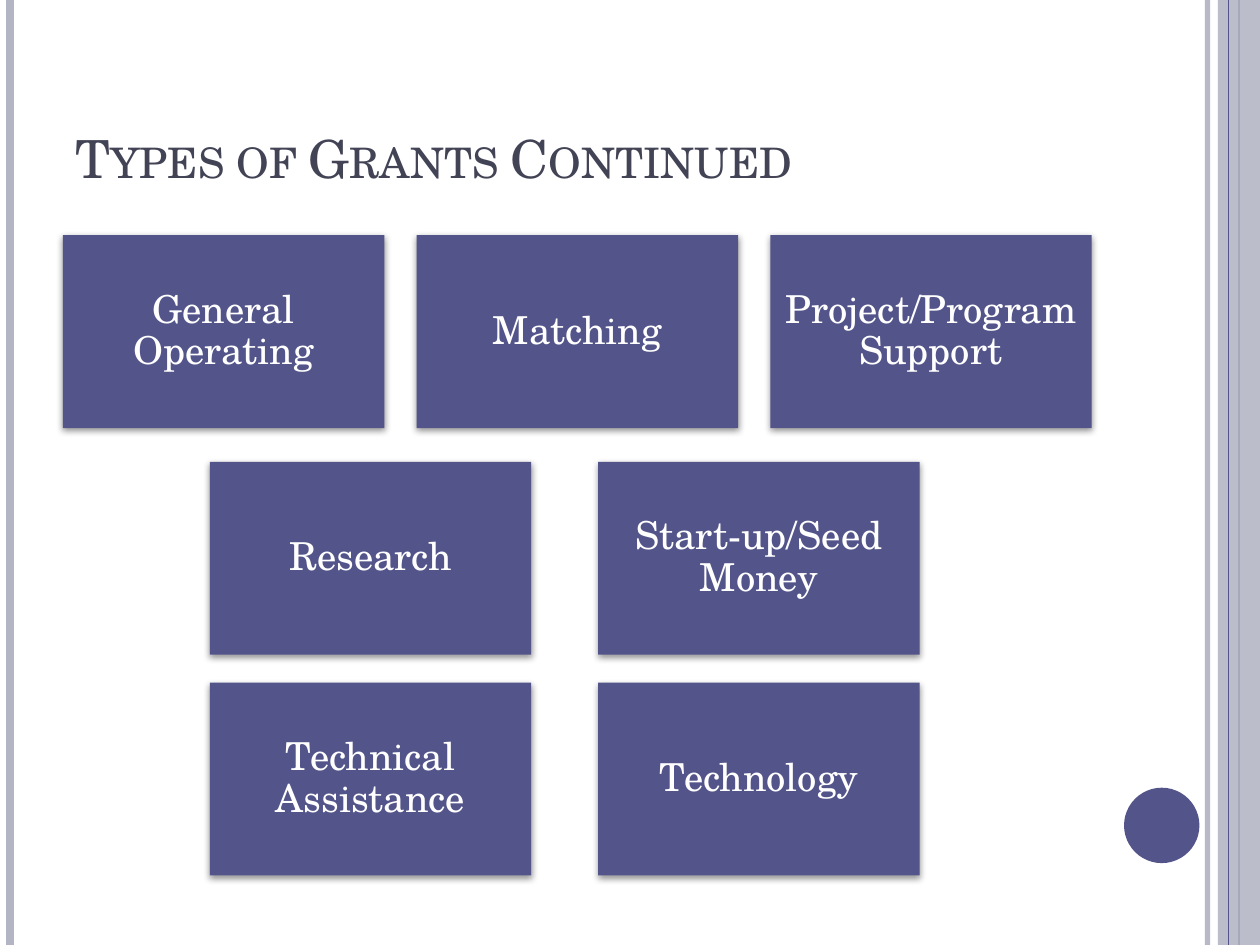
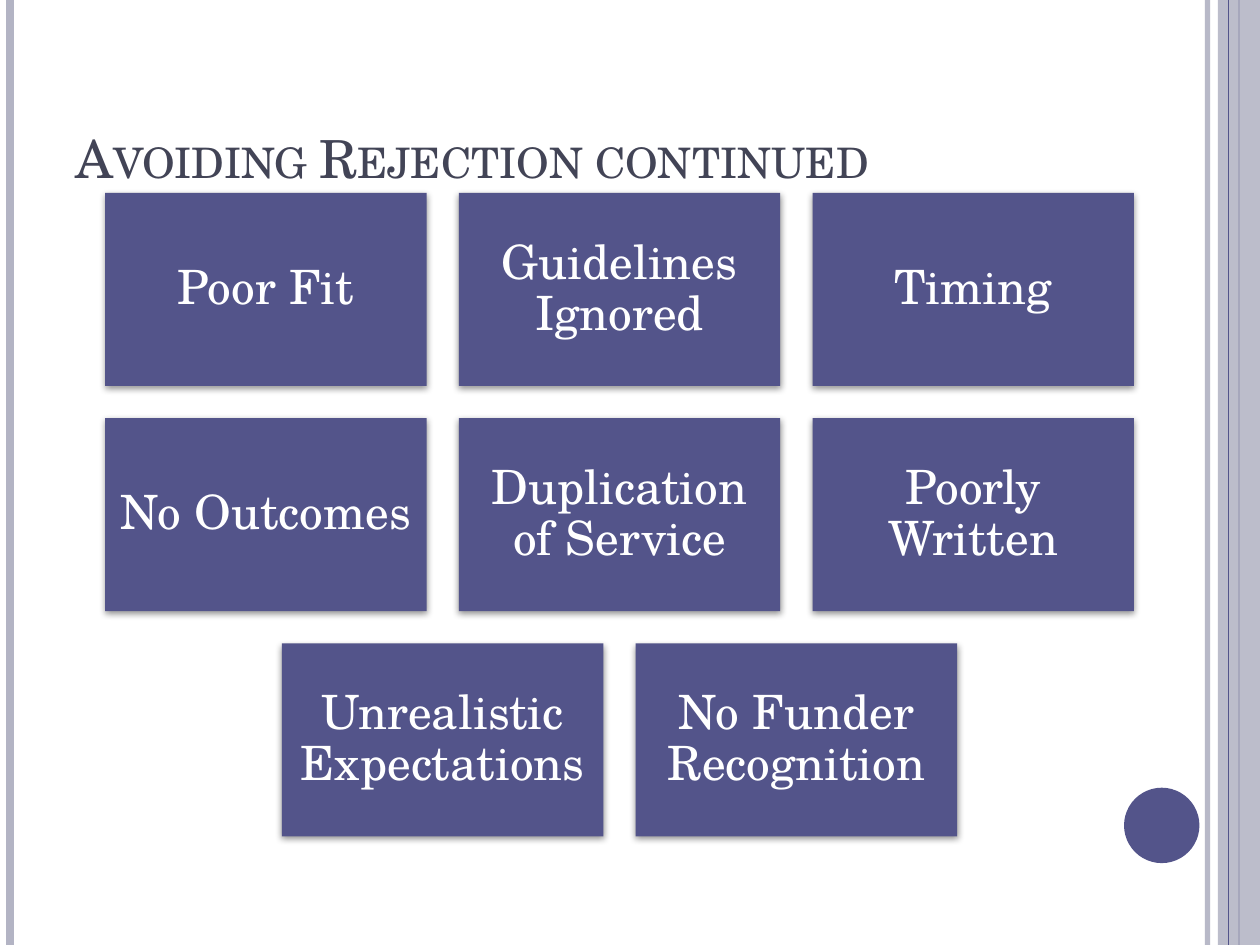
import pptx
import pptx.util
import pptx.dml.color
import pptx.enum.shapes
import pptx.enum.text
import pptx.oxml
import pptx.oxml.ns
import lxml.etree

Cm = pptx.util.Cm
Pt = pptx.util.Pt
RGBColor = pptx.dml.color.RGBColor
Shape = pptx.enum.shapes.MSO_SHAPE
Anchor = pptx.enum.text.MSO_ANCHOR
qn = pptx.oxml.ns.qn

INDIGO = RGBColor(0x53, 0x54, 0x8A)
LAVENDER = RGBColor(0xB3, 0xB4, 0xC4)
SLATE = RGBColor(0x42, 0x44, 0x56)
WHITE = RGBColor(0xFF, 0xFF, 0xFF)

FONT = "TeX Gyre Schola"
PAGE_WIDTH, PAGE_HEIGHT = 25.4, 19.05
CARD_WIDTH, CARD_HEIGHT = 6.48, 3.89
COLUMN_STEP = 7.13

SHADOW = (
    '<a:outerShdw xmlns:a="http://schemas.openxmlformats.org/drawingml/2006/main" '
    'blurRad="50800" dist="20320" dir="5400000" rotWithShape="0">'
    '<a:srgbClr val="000000"><a:alpha val="42000"/></a:srgbClr></a:outerShdw>'
)


class Deck:
    """Holds the presentation, its style and the current slide."""

    def __init__(self):
        self.presentation = pptx.Presentation()
        self.presentation.slide_width = Cm(PAGE_WIDTH)
        self.presentation.slide_height = Cm(PAGE_HEIGHT)
        self.page = None

    def add_page(self, title):
        """Start a slide with the side bands and the title."""
        self.page = self.presentation.slides.add_slide(self.presentation.slide_layouts[6])
        self.rule(24.34, LAVENDER, 3, opacity=93)
        self.rule(0.21, LAVENDER, 4.5)
        self.rule(24.98, INDIGO, 1.5)
        self.block(Shape.RECTANGLE, 24.55, 0, 0.85, PAGE_HEIGHT, LAVENDER, opacity=87)
        self.rule(24.76, INDIGO, 0.75)
        self.block(Shape.OVAL, 22.66, 15.88, 1.52, 1.52, INDIGO)
        self.title(title)

    def set_opacity(self, fill_parent, percent):
        """Make the solid fill under an element partly transparent."""
        color = fill_parent.find(qn("a:solidFill"))[0]
        lxml.etree.SubElement(color, qn("a:alpha")).set("val", str(percent * 1000))

    def rule(self, x, color, weight, opacity=None):
        """Draw a vertical line over the full page height."""
        line = self.page.shapes.add_connector(
            pptx.enum.shapes.MSO_CONNECTOR.STRAIGHT, Cm(x), 0, Cm(x), Cm(PAGE_HEIGHT))
        line.line.color.rgb = color
        line.line.width = Pt(weight)
        properties = line._element.spPr
        if opacity:
            self.set_opacity(properties.find(qn("a:ln")), opacity)
        lxml.etree.SubElement(properties, qn("a:effectLst"))

    def block(self, kind, left, top, width, height, color, opacity=None):
        """Draw a filled shape without an outline."""
        shape = self.page.shapes.add_shape(kind, Cm(left), Cm(top), Cm(width), Cm(height))
        shape.fill.solid()
        shape.fill.fore_color.rgb = color
        shape.line.fill.background()
        shape.shadow.inherit = False
        if opacity:
            self.set_opacity(shape._element.spPr, opacity)
        return shape

    def add_span(self, para, text, size, color):
        """Add one run of text to a paragraph."""
        span = para.add_run()
        span.text = text
        span.font.name = FONT
        span.font.size = Pt(size)
        span.font.color.rgb = color
        return span

    def title(self, text):
        """Set the slide title in small capitals."""
        box = self.page.shapes.add_textbox(Cm(1.27), Cm(0.76), Cm(20.75), Cm(3.18))
        frame = box.text_frame
        frame.word_wrap = True
        frame.vertical_anchor = Anchor.BOTTOM
        span = self.add_span(frame.paragraphs[0], text, 30, SLATE)
        span.font._element.set("cap", "small")

    def card(self, left, top, text, size):
        """Draw a shadowed card with centred text."""
        shape = self.block(Shape.RECTANGLE, left, top, CARD_WIDTH, CARD_HEIGHT, INDIGO)
        effects = shape._element.spPr.find(qn("a:effectLst"))
        effects.append(pptx.oxml.parse_xml(SHADOW))
        frame = shape.text_frame
        frame.word_wrap = True
        frame.vertical_anchor = Anchor.MIDDLE
        inset = Pt(size * 0.3)
        frame.margin_left = frame.margin_right = inset
        frame.margin_top = frame.margin_bottom = inset
        para = frame.paragraphs[0]
        para.alignment = pptx.enum.text.PP_ALIGN.CENTER
        para.line_spacing = 0.9
        para.space_after = Pt(size * 0.35)
        self.add_span(para, text, size, WHITE)

    def card_row(self, left, top, labels, size, step=COLUMN_STEP):
        """Draw a row of cards at equal steps."""
        for column, label in enumerate(labels):
            self.card(left + column * step, top, label, size)


def main():
    deck = Deck()

    deck.add_page("Types of Grants Continued")
    deck.card_row(1.27, 4.74, ["General Operating", "Matching", "Project/Program Support"], 22)
    lower_rows = [
        (9.31, ["Research", "Start-up/Seed Money"]),
        (13.76, ["Technical Assistance", "Technology"]),
    ]
    for top, labels in lower_rows:
        deck.card_row(4.23, top, labels, 22, step=7.83)

    deck.add_page("Avoiding Rejection continued")
    reasons = [
        ["Poor Fit", "Guidelines Ignored", "Timing"],
        ["No Outcomes", "Duplication of Service", "Poorly Written"],
        ["Unrealistic Expectations", "No Funder Recognition"],
    ]
    for row, labels in enumerate(reasons):
        indent = (3 - len(labels)) * COLUMN_STEP / 2
        deck.card_row(2.12 + indent, 3.89 + row * 4.54, labels, 27)

    deck.presentation.save("out.pptx")


if __name__ == "__main__":
    main()
